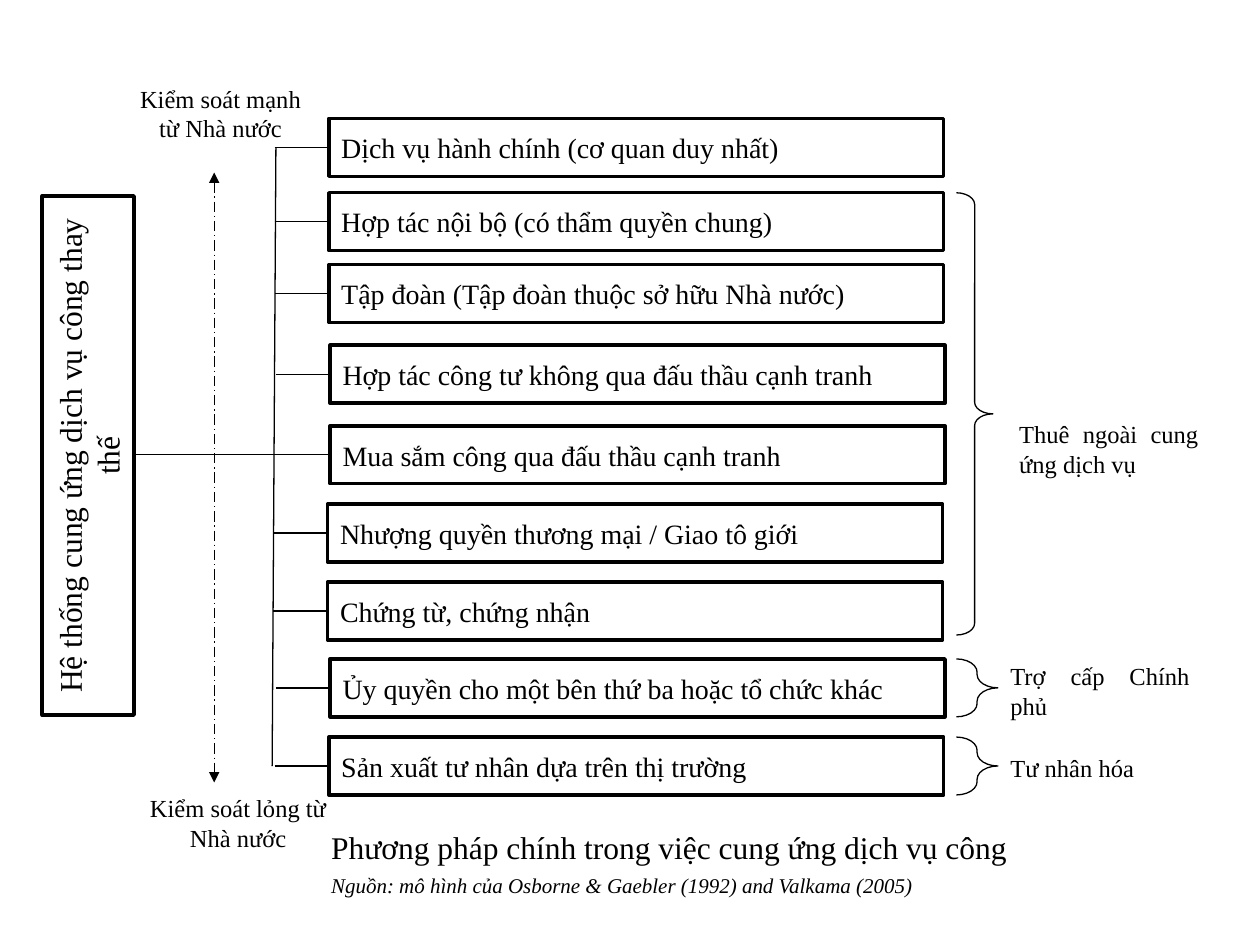
from dataclasses import dataclass

from lxml.etree import SubElement
from pptx import Presentation
from pptx.dml.color import RGBColor
from pptx.enum.dml import MSO_LINE_DASH_STYLE as Dash
from pptx.enum.shapes import MSO_CONNECTOR as Connector, MSO_SHAPE as Shape
from pptx.enum.text import MSO_ANCHOR as Anchor, PP_ALIGN as Align
from pptx.oxml.ns import qn
from pptx.util import Inches, Pt


@dataclass(frozen=True)
class Theme:
    font: str = "Times New Roman"
    ink: RGBColor = RGBColor(0, 0, 0)
    title: int = 18
    method: int = 16
    label: int = 14
    source: int = 12
    thick: float = 2
    thin: float = 0.75


THEME = Theme()
SLIDE_W, SLIDE_H = Inches(10), Inches(7.5)
COLS, ROWS = 100, 75

BOX_W, BOX_H, BRANCH_W = 48.8, 4.6, 4.3
BRACE_X, LABEL_W, LABEL_H = 75.9, 16.2, 6.4

# left column, top row, wording
METHODS = [
    (26.1, 9.4, "Dịch vụ hành chính (cơ quan duy nhất)"),
    (26.1, 15.3, "Hợp tác nội bộ (có thẩm quyền chung)"),
    (26.1, 21, "Tập đoàn (Tập đoàn thuộc sở hữu Nhà nước)"),
    (26.2, 27.4, "Hợp tác công tư không qua đấu thầu cạnh tranh"),
    (26.2, 33.8, "Mua sắm công qua đấu thầu cạnh tranh"),
    (26, 40, "Nhượng quyền thương mại / Giao tô giới"),
    (26, 46.2, "Chứng từ, chứng nhận"),
    (26.2, 52.3, "Ủy quyền cho một bên thứ ba hoặc tổ chức khác"),
    (26.1, 58.5, "Sản xuất tư nhân dựa trên thị trường"),
]
ROOT_METHOD = 4

# brace top, width, height; label left, top, wording
GROUPS = [
    (15.3, 2.9, 35.1, 79.9, 32.2, "Thuê ngoài cung ứng dịch vụ"),
    (52.3, 3.3, BOX_H, 79.2, 51.4, "Trợ cấp Chính phủ"),
    (58.5, 3.3, BOX_H, 79.2, 57.5, "Tư nhân hóa"),
]

CONTROL_LABELS = [
    (9.4, 5.8, "Kiểm soát mạnh từ Nhà nước"),
    (10.8, 62.1, "Kiểm soát lỏng từ Nhà nước"),
]


def col(n):
    return round(SLIDE_W * n / COLS)


def row(n):
    return round(SLIDE_H * n / ROWS)


def cells(x, y, w, h):
    return col(x), row(y), col(w), row(h)


def write(tf, *lines, align=Align.JUSTIFY, space=0):
    """Fill a text frame with (text, size, italic) lines."""
    tf.word_wrap = True
    tf.vertical_anchor = Anchor.MIDDLE
    for i, (text, size, italic) in enumerate(lines):
        p = tf.add_paragraph() if i else tf.paragraphs[0]
        p.alignment = align
        p.space_before = p.space_after = Pt(space)
        r = p.add_run()
        r.text = text
        r.font.name, r.font.size = THEME.font, Pt(size)
        r.font.italic = italic
        r.font.color.rgb = THEME.ink


def stroke(shape, width):
    shape.line.color.rgb = THEME.ink
    shape.line.width = Pt(width)


def add_outline(s, kind, x, y, w, h, width):
    sp = s.shapes.add_shape(kind, *cells(x, y, w, h))
    sp.shadow.inherit = False
    sp.fill.background()
    stroke(sp, width)
    return sp


def add_box(s, x, y, w, h, text, size, align=Align.JUSTIFY):
    sp = add_outline(s, Shape.RECTANGLE, x, y, w, h, THEME.thick)
    write(sp.text_frame, (text, size, False), align=align)
    return sp


def add_brace(s, x, y, w, h):
    sp = add_outline(s, Shape.RIGHT_BRACE, x, y, w, h, THEME.thin)
    sp.adjustments[0] = 0.32
    sp.adjustments[1] = 0.5


def add_text(s, x, y, w, h, *lines, align=Align.JUSTIFY):
    tb = s.shapes.add_textbox(*cells(x, y, w, h))
    write(tb.text_frame, *lines, align=align, space=2)


def add_line(s, x1, y1, x2, y2):
    line = s.shapes.add_connector(
        Connector.STRAIGHT, col(x1), row(y1), col(x2), row(y2))
    stroke(line, THEME.thin)
    SubElement(line._element.spPr, qn("a:effectLst"))
    return line


def add_control_axis(s):
    """Dashed axis with an arrowhead at both ends, and its two labels."""
    axis = add_line(s, 17, 13.7, 17, 62.1)
    axis.line.dash_style = Dash.LONG_DASH_DOT
    ln = axis.line._get_or_add_ln()
    for end in ("a:headEnd", "a:tailEnd"):
        SubElement(ln, qn(end), type="triangle")
    for x, y, text in CONTROL_LABELS:
        add_text(s, x, y, LABEL_W, LABEL_H, (text, THEME.label, False),
                 align=Align.CENTER)


def add_methods(s):
    """Method boxes, each joined to the trunk; one reaches the root box."""
    middles = [y + BOX_H / 2 for _, y, _ in METHODS]
    add_line(s, 21.9, middles[0], 21.6, middles[-1])
    for i, ((x, y, text), middle) in enumerate(zip(METHODS, middles)):
        start = 10.8 if i == ROOT_METHOD else x - BRANCH_W
        add_line(s, start, middle, x, middle)
        add_box(s, x, y, BOX_W, BOX_H, text, THEME.method)


def add_groups(s):
    for y, w, h, label_x, label_y, text in GROUPS:
        add_brace(s, BRACE_X, y, w, h)
        add_text(s, label_x, label_y, LABEL_W, LABEL_H + 0.4,
                 (text, THEME.label, False))


def main():
    prs = Presentation()
    prs.slide_width, prs.slide_height = SLIDE_W, SLIDE_H
    s = prs.slides.add_slide(prs.slide_layouts[6])

    root = add_box(s, -13.6, 32.5, 41.2, 7.3,
                   "Hệ thống cung ứng dịch vụ công thay thế",
                   THEME.title, align=Align.CENTER)
    root.rotation = 270
    add_control_axis(s)
    add_methods(s)
    add_groups(s)
    add_text(
        s, 25.3, 65.3, 62.6, 6.4,
        ("Phương pháp chính trong việc cung ứng dịch vụ công",
         THEME.title, False),
        ("Nguồn: mô hình của Osborne & Gaebler (1992) and Valkama (2005)",
         THEME.source, True))
    prs.save("out.pptx")


if __name__ == "__main__":
    main()
